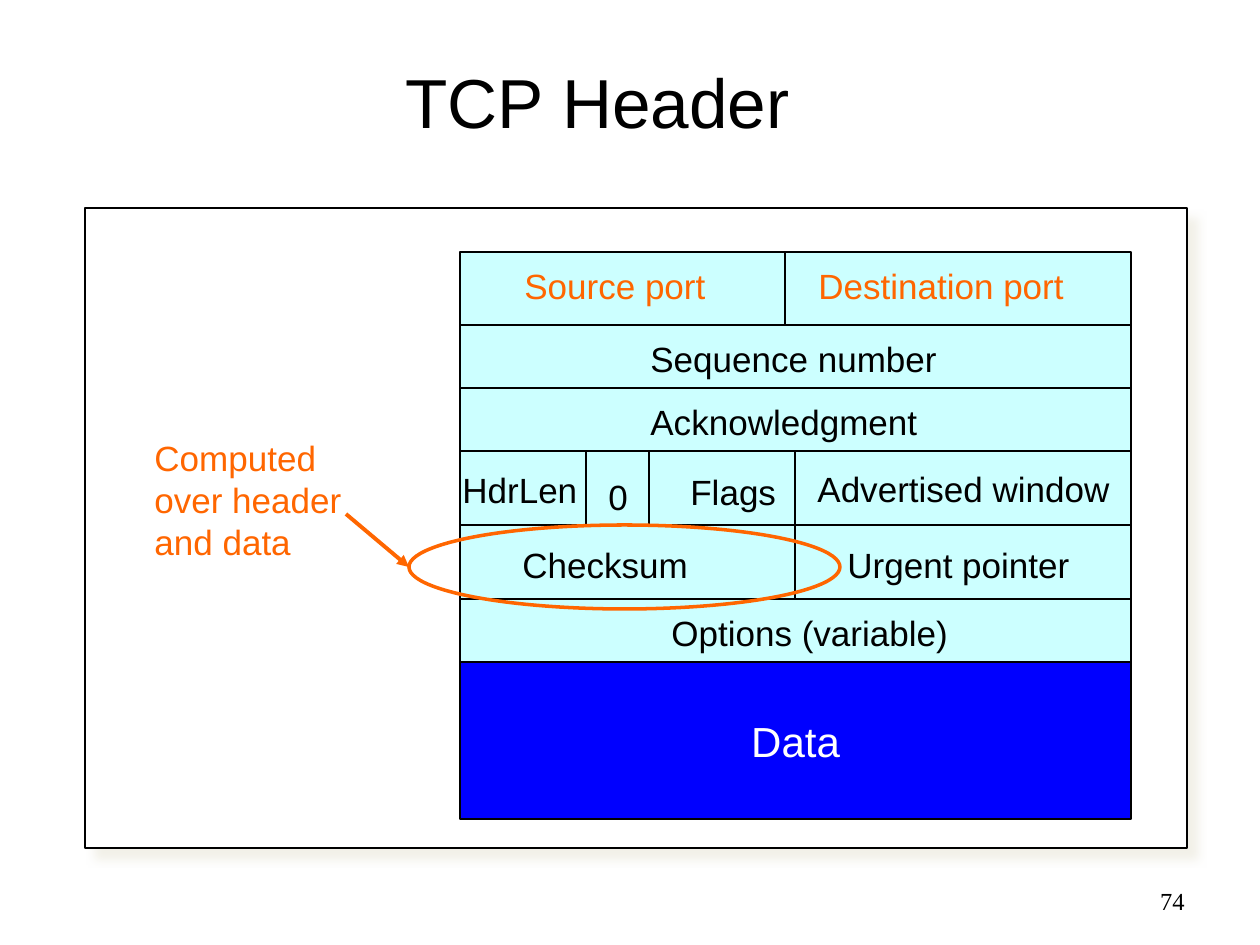
from dataclasses import dataclass

from lxml.etree import SubElement
from pptx import Presentation
from pptx.dml.color import RGBColor
from pptx.enum.shapes import MSO_CONNECTOR, MSO_SHAPE
from pptx.enum.text import MSO_ANCHOR, MSO_AUTO_SIZE, PP_ALIGN
from pptx.oxml.ns import qn
from pptx.util import Emu, Pt

EMU_PER_INCH = 914400
PX_PER_INCH = 126


@dataclass(frozen=True)
class Theme:
    font: str = "Arial"
    number_font: str = "Times New Roman"
    ink: str = "000000"
    paper: str = "FFFFFF"
    field: str = "CCFFFF"
    data: str = "0000FF"
    accent: str = "FF6600"
    shadow: str = "EEECE1"
    title_size: float = 39.6
    data_size: float = 24
    label_size: float = 20
    number_size: float = 14
    thin: float = 0.75
    ring: float = 2
    arrow: float = 2.25


THEME = Theme()

LEFT, RIGHT = 460, 1131
PORT_SPLIT, HALF_SPLIT = 785, 795
TOP = 252
# Row height, then the x positions that split the row into boxes
ROWS = [
    (73, [PORT_SPLIT]),
    (63, []),
    (63, []),
    (74, [HALF_SPLIT]),
    (74, [HALF_SPLIT]),
    (63, []),
]
DATA_HEIGHT = 157
FLAG_LINES = [586, 649]
LABEL_HEIGHT = 54
# Text, left, top, width, colour; each width leaves a little room to spare
LABELS = [
    ("Source port", 512, 258, 212, THEME.accent),
    ("Destination port", 806, 258, 276, THEME.accent),
    ("Sequence number", 638, 331, 318, THEME.ink),
    ("Acknowledgment", 638, 394, 298, THEME.ink),
    ("HdrLen", 450, 462, 147, THEME.ink),
    ("0", 596, 469, 48, THEME.ink),
    ("Flags", 678, 464, 115, THEME.ink),
    ("Advertised window", 805, 461, 323, THEME.ink),
    ("Checksum", 510, 537, 196, THEME.ink),
    ("Urgent pointer", 835, 537, 252, THEME.ink),
    ("Options (variable)", 659, 605, 308, THEME.ink),
]


def px(length):
    return Emu(round(length * EMU_PER_INCH / PX_PER_INCH))


def rgb(colour):
    return RGBColor.from_string(colour)


def add_run(paragraph, text, size, colour, font=THEME.font):
    run = paragraph.add_run()
    run.text = text
    run.font.size = Pt(size)
    run.font.name = font
    run.font.color.rgb = rgb(colour)


def set_line(line, colour, width):
    line.color.rgb = rgb(colour)
    line.width = Pt(width)


def add_box(slide, left, top, width, height, fill=None,
            line=THEME.ink, line_width=THEME.thin, kind=MSO_SHAPE.RECTANGLE):
    shape = slide.shapes.add_shape(kind, px(left), px(top), px(width), px(height))
    shape.shadow.inherit = False
    if fill:
        shape.fill.solid()
        shape.fill.fore_color.rgb = rgb(fill)
    else:
        shape.fill.background()
    set_line(shape.line, line, line_width)
    return shape


def add_text_box(slide, left, top, width, height, wrap=False,
                 auto_size=MSO_AUTO_SIZE.SHAPE_TO_FIT_TEXT):
    box = slide.shapes.add_textbox(px(left), px(top), px(width), px(height))
    box.text_frame.word_wrap = wrap
    box.text_frame.auto_size = auto_size
    return box.text_frame


def add_line(slide, start, end, colour=THEME.ink, width=THEME.thin, arrow=False):
    connector = slide.shapes.add_connector(
        MSO_CONNECTOR.STRAIGHT, *(px(value) for value in (*start, *end)))
    set_line(connector.line, colour, width)
    properties = connector._element.spPr
    if arrow:
        SubElement(properties.find(qn("a:ln")), qn("a:tailEnd"), type="triangle")
    SubElement(properties, qn("a:effectLst"))


def add_offset_shadow(shape):
    """Give the shape a soft shadow below and to the right."""
    effects = shape._element.spPr.find(qn("a:effectLst"))
    shadow = SubElement(effects, qn("a:outerShdw"), blurRad=str(Pt(5)),
                        dist=str(Pt(8.5)), dir=str(45 * 60000),
                        algn="ctr", rotWithShape="0")
    colour = SubElement(shadow, qn("a:srgbClr"), val=THEME.shadow)
    SubElement(colour, qn("a:alpha"), val="75000")


def add_title(slide, text):
    title = slide.shapes.title
    title.left, title.top, title.width, title.height = map(px, (42, 53, 1111, 95))
    frame = title.text_frame
    frame.auto_size = MSO_AUTO_SIZE.NONE
    frame.vertical_anchor = MSO_ANCHOR.MIDDLE
    frame.paragraphs[0].alignment = PP_ALIGN.CENTER
    add_run(frame.paragraphs[0], text, THEME.title_size, THEME.ink)


def add_header_fields(slide):
    top = TOP
    for height, splits in ROWS:
        edges = [LEFT, *splits, RIGHT]
        for left, right in zip(edges, edges[1:]):
            add_box(slide, left, top, right - left, height, THEME.field)
        top += height

    data = add_box(slide, LEFT, top, RIGHT - LEFT, DATA_HEIGHT, THEME.data)
    frame = data.text_frame
    frame.word_wrap = False
    frame.vertical_anchor = MSO_ANCHOR.MIDDLE
    frame.paragraphs[0].alignment = PP_ALIGN.CENTER
    add_run(frame.paragraphs[0], "Data", THEME.data_size, THEME.paper)

    flags_top = TOP + sum(height for height, _ in ROWS[:3])
    for x in FLAG_LINES:
        add_line(slide, (x, flags_top), (x, flags_top + ROWS[3][0]))

    for text, left, label_top, width, colour in LABELS:
        frame = add_text_box(slide, left, label_top, width, LABEL_HEIGHT)
        add_run(frame.paragraphs[0], text, THEME.label_size, colour)


def add_checksum_note(slide):
    frame = add_text_box(slide, 142, 430, 218, 140)
    first = frame.paragraphs[0]
    add_run(first, "Computed ", THEME.label_size, THEME.accent)
    first.add_line_break()
    add_run(first, "over header", THEME.label_size, THEME.accent)
    add_run(frame.add_paragraph(), "and data", THEME.label_size, THEME.accent)
    add_box(slide, 409, 525, 431, 84, line=THEME.accent,
            line_width=THEME.ring, kind=MSO_SHAPE.OVAL)
    add_line(slide, (346, 514), (409, 567), THEME.accent, THEME.arrow, arrow=True)


def add_slide_number(slide, number):
    frame = add_text_box(slide, 903, 876, 294, 50, wrap=True,
                         auto_size=MSO_AUTO_SIZE.NONE)
    frame.vertical_anchor = MSO_ANCHOR.MIDDLE
    frame.paragraphs[0].alignment = PP_ALIGN.RIGHT
    add_run(frame.paragraphs[0], number, THEME.number_size, THEME.ink, THEME.number_font)


def main():
    presentation = Presentation()
    presentation.slide_width, presentation.slide_height = px(1260), px(945)
    slide = presentation.slides.add_slide(presentation.slide_layouts[5])
    add_slide_number(slide, "74")
    add_offset_shadow(add_box(slide, 85, 208, 1102, 640, THEME.paper))
    add_title(slide, "TCP Header")
    add_header_fields(slide)
    add_checksum_note(slide)
    presentation.save("out.pptx")


if __name__ == "__main__":
    main()
